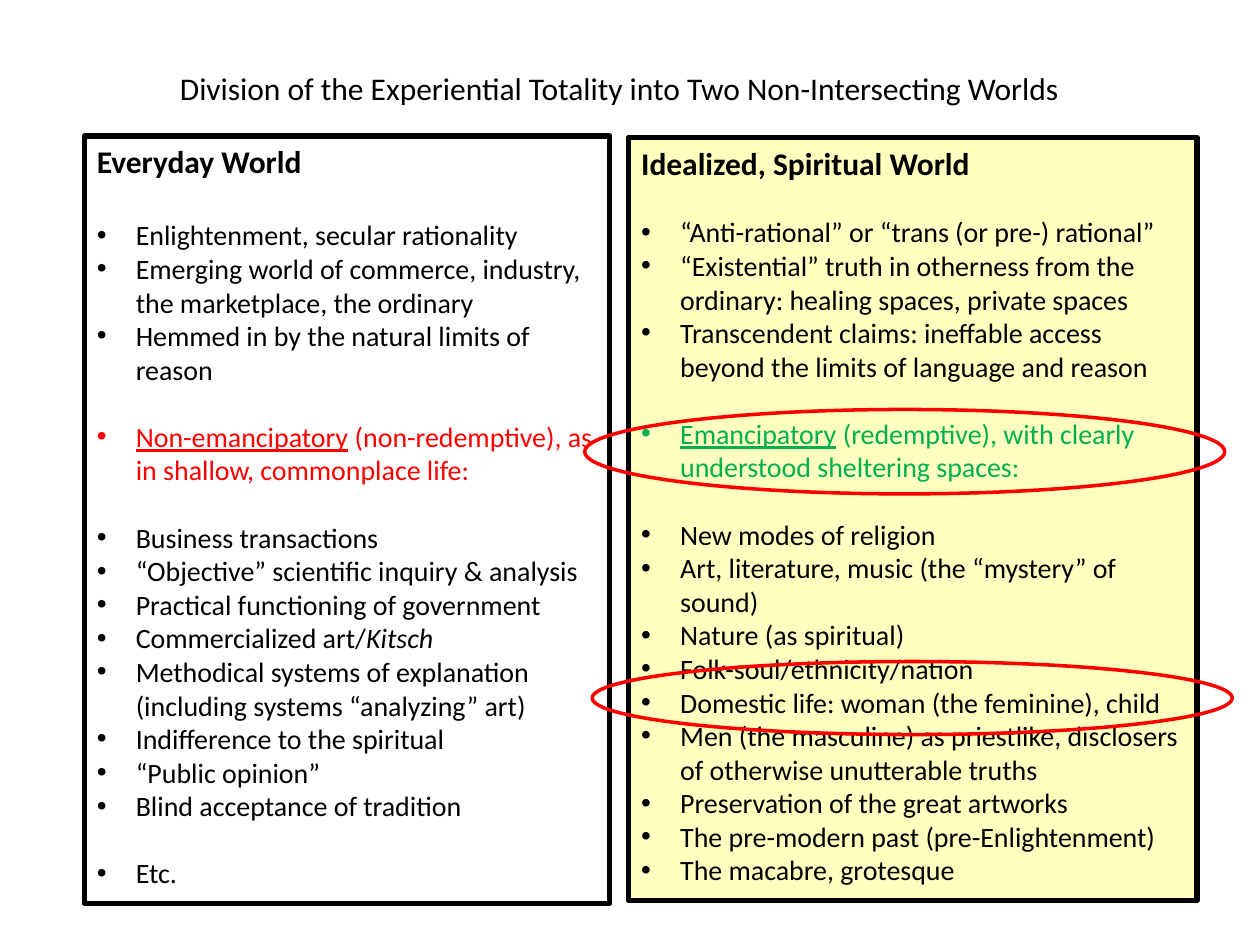
from lxml import etree
from pptx import Presentation
from pptx.dml.color import RGBColor
from pptx.enum.shapes import MSO_SHAPE
from pptx.enum.text import MSO_ANCHOR, MSO_AUTO_SIZE, PP_ALIGN
from pptx.oxml.ns import qn
from pptx.util import Inches, Pt

RECTANGLE, OVAL = MSO_SHAPE.RECTANGLE, MSO_SHAPE.OVAL
TOP, LEFT = MSO_ANCHOR.TOP, PP_ALIGN.LEFT
GROW = MSO_AUTO_SIZE.SHAPE_TO_FIT_TEXT

BLACK = RGBColor(0x00, 0x00, 0x00)
RED = RGBColor(0xFF, 0x00, 0x00)
GREEN = RGBColor(0x00, 0xB0, 0x50)
YELLOW = RGBColor(0xFF, 0xFF, 0x00)

FONT = "Calibri"
HEADING_SIZE, BODY_SIZE = Pt(18), Pt(16)
GROUP_GAP = Pt(19.2)
INDENT = Inches(0.31)

# Each world lists groups of points; a point is a list of (text, style) runs.
PLAIN, UNDERLINED, ITALIC = "plain", "underlined", "italic"

EVERYDAY_GROUPS = [
    (BLACK, [
        [("Enlightenment, secular rationality", PLAIN)],
        [("Emerging world of commerce, industry, the marketplace, the ordinary", PLAIN)],
        [("Hemmed in by the natural limits of reason", PLAIN)],
    ]),
    (RED, [
        [("Non-emancipatory", UNDERLINED),
         (" (non-redemptive), as in shallow, commonplace life:", PLAIN)],
    ]),
    (BLACK, [
        [("Business transactions", PLAIN)],
        [("“Objective” scientific inquiry & analysis", PLAIN)],
        [("Practical functioning of government", PLAIN)],
        [("Commercialized art/", PLAIN), ("Kitsch", ITALIC)],
        [("Methodical systems of explanation (including systems “analyzing” art)", PLAIN)],
        [("Indifference to the spiritual", PLAIN)],
        [("“Public opinion”", PLAIN)],
        [("Blind acceptance of tradition", PLAIN)],
    ]),
    (BLACK, [[("Etc.", PLAIN)]]),
]

IDEALIZED_GROUPS = [
    (BLACK, [
        [("“Anti-rational” or “trans (or pre-) rational”", PLAIN)],
        [("“Existential” truth in otherness from the ordinary: "
          "healing spaces, private spaces", PLAIN)],
        [("Transcendent claims: ineffable access beyond the limits "
          "of language and reason", PLAIN)],
    ]),
    (GREEN, [
        [("Emancipatory", UNDERLINED),
         (" (redemptive), with clearly understood sheltering spaces:", PLAIN)],
    ]),
    (BLACK, [
        [("New modes of religion", PLAIN)],
        [("Art, literature, music (the “mystery” of sound)", PLAIN)],
        [("Nature (as spiritual)", PLAIN)],
        [("Folk-soul/ethnicity/nation", PLAIN)],
        [("Domestic life: woman (the feminine), child", PLAIN)],
        [("Men (the masculine) as priestlike, disclosers of otherwise "
          "unutterable truths", PLAIN)],
        [("Preservation of the great artworks", PLAIN)],
        [("The pre-modern past (pre-Enlightenment)", PLAIN)],
        [("The macabre, grotesque", PLAIN)],
    ]),
]


def format_run(run, size, color, bold=False):
    run.font.name = FONT
    run.font.size = size
    run.font.bold = bold
    run.font.color.rgb = color


def add_bullet(paragraph):
    properties = paragraph._p.get_or_add_pPr()
    properties.set("marL", str(INDENT))
    properties.set("indent", str(-INDENT))
    etree.SubElement(properties, qn("a:buFont"), typeface="Arial")
    etree.SubElement(properties, qn("a:buChar"), char="•")


def add_outline(slide, kind, box, color, width):
    shape = slide.shapes.add_shape(kind, *map(Inches, box))
    shape.shadow.inherit = False
    shape.fill.background()
    shape.line.color.rgb = color
    shape.line.width = width
    return shape


def add_title(slide, box, text):
    text_frame = slide.shapes.add_textbox(*map(Inches, box)).text_frame
    text_frame.word_wrap = True
    text_frame.auto_size = GROW
    text_frame.text = text
    format_run(text_frame.paragraphs[0].runs[0], HEADING_SIZE, BLACK)


def add_world(slide, box, heading, groups, heading_gap, tint=None):
    shape = add_outline(slide, RECTANGLE, box, BLACK, Pt(3))
    if tint is not None:
        shape.fill.solid()
        shape.fill.fore_color.rgb = tint
        color_element = shape._element.spPr.find(qn("a:solidFill"))[0]
        etree.SubElement(color_element, qn("a:alpha"), val="25000")

    text_frame = shape.text_frame
    text_frame.word_wrap = True
    text_frame.auto_size = GROW
    text_frame.vertical_anchor = TOP
    text_frame.text = heading
    text_frame.paragraphs[0].alignment = LEFT
    format_run(text_frame.paragraphs[0].runs[0], HEADING_SIZE, BLACK, bold=True)

    gap = heading_gap
    for color, points in groups:
        for index, point in enumerate(points):
            paragraph = text_frame.add_paragraph()
            paragraph.alignment = LEFT
            add_bullet(paragraph)
            if index == 0:
                paragraph.space_before = gap
            for text, style in point:
                run = paragraph.add_run()
                run.text = text
                format_run(run, BODY_SIZE, color)
                run.font.underline = style == UNDERLINED
                run.font.italic = style == ITALIC
        gap = GROUP_GAP


def main():
    presentation = Presentation()
    presentation.slide_width = Inches(10)
    presentation.slide_height = Inches(7.5)
    slide = presentation.slides.add_slide(presentation.slide_layouts[6])

    # The two worlds side by side
    add_world(slide, (0.67, 1.08, 4.17, 6.09), "Everyday World",
              EVERYDAY_GROUPS, Pt(21.6))
    add_world(slide, (4.99, 1.09, 4.51, 6.06), "Idealized, Spiritual World",
              IDEALIZED_GROUPS, GROUP_GAP, tint=YELLOW)

    # Rings around the key points
    for ring in ((4.7, 5.25, 5.08, 0.58), (4.64, 3.25, 5.08, 0.67)):
        add_outline(slide, OVAL, ring, RED, Pt(2))

    add_title(slide, (1.33, 0.5, 7.67, 0.4),
              "Division of the Experiential Totality into Two Non-Intersecting Worlds")
    presentation.save("out.pptx")


if __name__ == "__main__":
    main()
